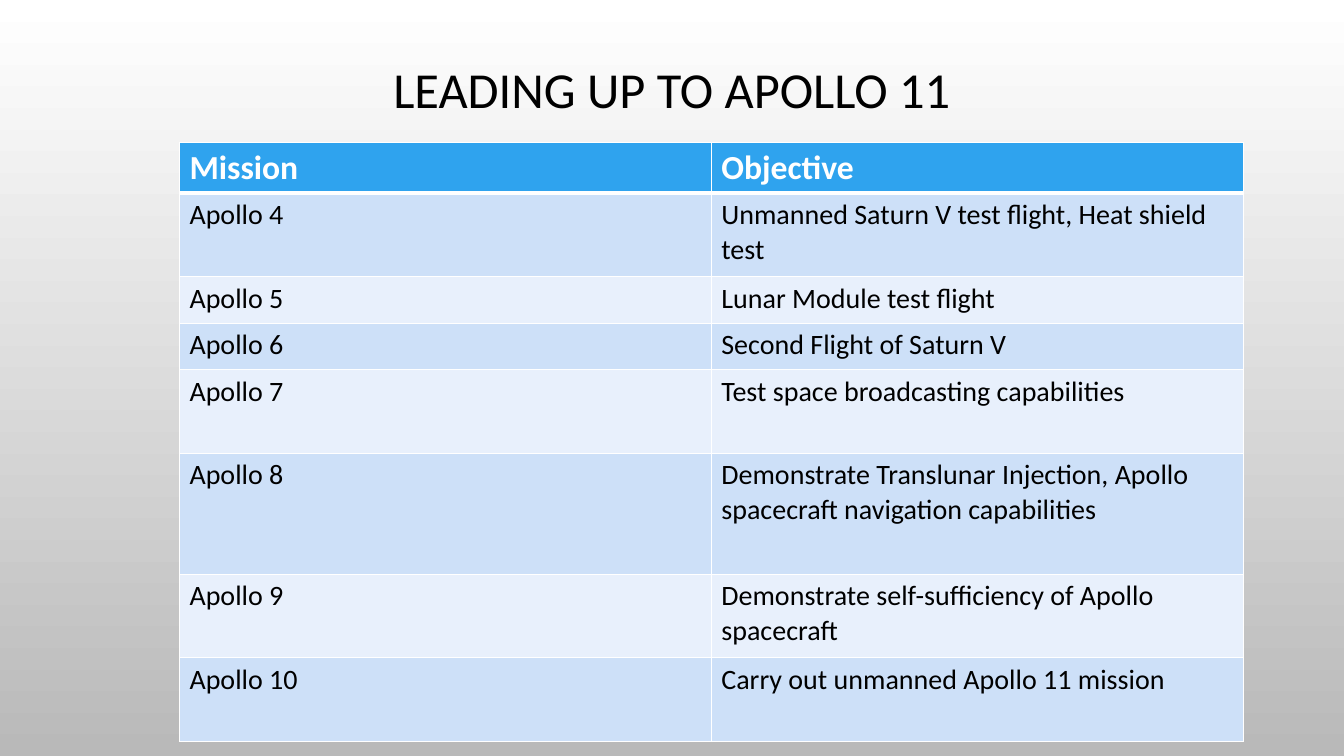
from lxml.etree import SubElement
from pptx import Presentation
from pptx.dml.color import RGBColor
from pptx.enum.text import MSO_ANCHOR, MSO_AUTO_SIZE, PP_ALIGN
from pptx.oxml.ns import qn
from pptx.util import Inches, Pt

MISSIONS = [
    ("Mission", "Objective", 0.46),
    ("Apollo 4", "Unmanned Saturn V test flight, Heat shield test", 0.83),
    ("Apollo 5", "Lunar Module test flight", 0.46),
    ("Apollo 6", "Second Flight of Saturn V", 0.46),
    ("Apollo 7", "Test space broadcasting capabilities", 0.83),
    ("Apollo 8", "Demonstrate Translunar Injection, Apollo spacecraft navigation capabilities", 1.2),
    ("Apollo 9", "Demonstrate self-sufficiency of Apollo spacecraft", 0.83),
    ("Apollo 10", "Carry out unmanned Apollo 11 mission", 0.83),
]


def rgb(color):
    return RGBColor.from_string(color)


class SlideBuilder:
    font = "Calibri"
    black, white = "000000", "FFFFFF"
    header, bands = "2FA3EE", ("E8F0FC", "CDE0F8")

    def __init__(self, s):
        self.s = s

    def background(self, top, bottom):
        fill = self.s.background.fill
        fill.gradient()
        fill.gradient_angle = 270
        for stop, color, position in zip(fill.gradient_stops, (top, bottom), (0, 1)):
            stop.color.rgb = rgb(color)
            stop.position = position

    def style(self, p, size, color, bold=False):
        for r in p.runs:
            r.font.name = self.font
            r.font.size = Pt(size)
            r.font.bold = bold
            r.font.color.rgb = rgb(color)

    def title(self, text, left, top, width, height):
        sp = self.s.shapes.title
        sp.left, sp.top = Inches(left), Inches(top)
        sp.width, sp.height = Inches(width), Inches(height)
        tf = sp.text_frame
        tf.text = text
        tf.word_wrap = True
        tf.auto_size = MSO_AUTO_SIZE.NONE
        tf.vertical_anchor = MSO_ANCHOR.MIDDLE
        p = tf.paragraphs[0]
        p.alignment = PP_ALIGN.CENTER
        p.line_spacing = 0.9
        self.style(p, 36, self.black)

    def border(self, cell, side, width):
        tcPr = cell._tc.get_or_add_tcPr()
        ln = SubElement(tcPr, qn(f"a:ln{side}"), w=str(Pt(width)))
        fill = SubElement(ln, qn("a:solidFill"))
        SubElement(fill, qn("a:srgbClr"), val=self.white)

    def cell(self, cell, text, row):
        for side in "LRTB":
            under_header = (row, side) in ((0, "B"), (1, "T"))
            self.border(cell, side, 3 if under_header else 1)
        cell.fill.solid()
        cell.fill.fore_color.rgb = rgb(self.bands[row % 2] if row else self.header)
        cell.text_frame.text = text
        p = cell.text_frame.paragraphs[0]
        if row:
            self.style(p, 20, self.black)
        else:
            self.style(p, 24, self.white, True)

    def table(self, rows, left, top, width):
        height = sum(row[-1] for row in rows)
        frame = self.s.shapes.add_table(
            len(rows), 2, Inches(left), Inches(top), Inches(width), Inches(height))
        table = frame.table
        for i, (*texts, row_height) in enumerate(rows):
            table.rows[i].height = Inches(row_height)
            for j, text in enumerate(texts):
                self.cell(table.cell(i, j), text, i)


def main():
    prs = Presentation()
    prs.slide_width, prs.slide_height = Inches(13.33), Inches(7.5)
    builder = SlideBuilder(prs.slides.add_slide(prs.slide_layouts[5]))
    builder.background("FFFFFF", "B9B9B9")
    builder.title("LEADING UP TO APOLLO 11", 1, 0.04, 11.33, 1.75)
    builder.table(MISSIONS, 1.78, 1.41, 10.55)
    prs.save("out.pptx")


if __name__ == "__main__":
    main()
